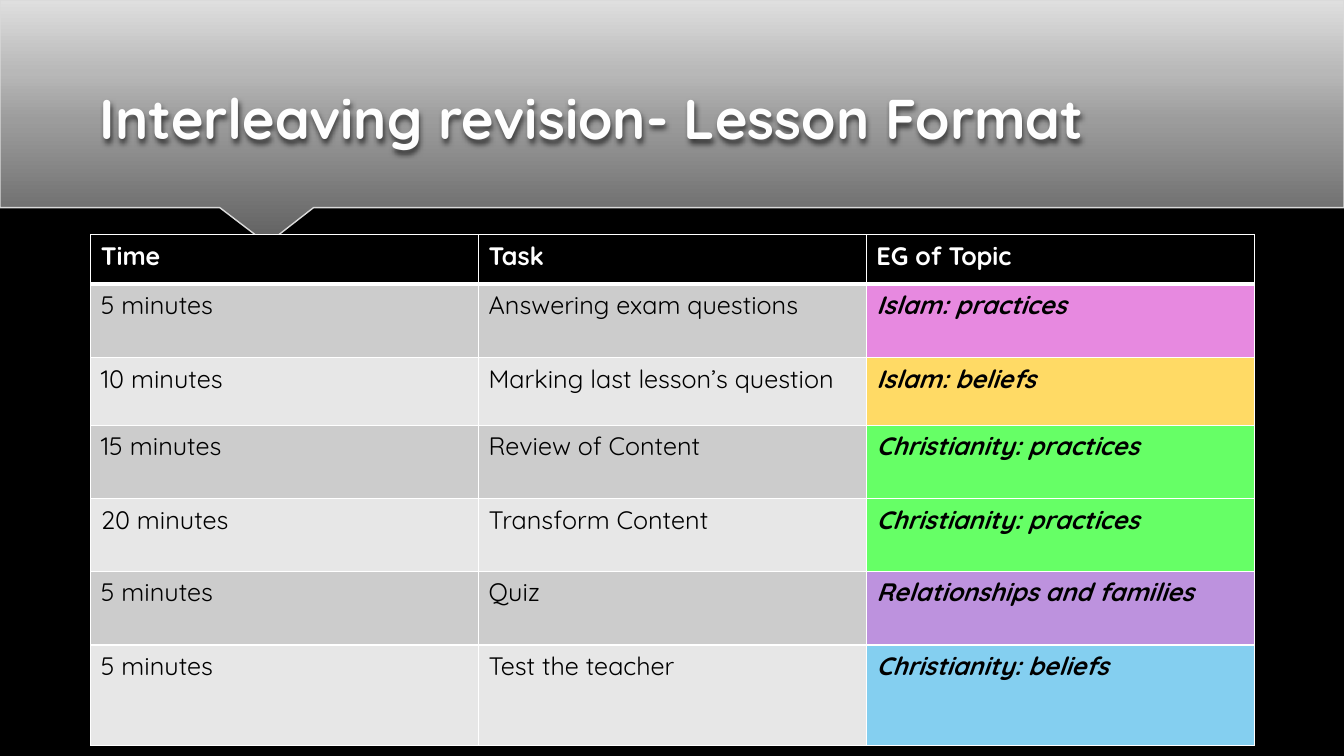
from lxml.etree import SubElement
from pptx import Presentation
from pptx.dml.color import RGBColor
from pptx.enum.text import MSO_ANCHOR, MSO_AUTO_SIZE, PP_ALIGN
from pptx.oxml.ns import qn
from pptx.util import Inches, Pt

FONT = "Quicksand"
HEADS = ["Time", "Task", "EG of Topic"]
TASKS = [
    ("5 minutes", "Answering exam questions", "Islam: practices", "E789E0"),
    ("10 minutes", "Marking last lesson’s question", "Islam: beliefs", "FFDA65"),
    ("15 minutes", "Review of Content", "Christianity: practices", "66FF66"),
    ("20 minutes", "Transform Content", "Christianity: practices", "66FF66"),
    ("5 minutes", "Quiz", "Relationships and families", "BD92DE"),
    ("5 minutes", "Test the teacher", "Christianity: beliefs", "84CFF0"),
]
ROWS = [0.49, 0.73, 0.67, 0.73, 0.72, 0.73, 1]
BANDS = ["CCCCCC", "E7E7E7"]
BANNER = [
    (13.33, 0), (0, 0), (0, 2.06), (2.18, 2.06), (2.6, 2.38), (2.62, 2.39),
    (2.67, 2.39), (2.7, 2.38), (3.11, 2.06), (13.33, 2.06),
]
STOPS = [(0, "616161"), (50, "9C9C9C"), (70, "B8B8B8"), (100, "DFDFDF")]


def paint(fill, color):
    fill.solid()
    fill.fore_color.rgb = RGBColor.from_string(color)


def style(para, size, color, bold=False, italic=False):
    font = para.font
    font.name, font.size = FONT, Pt(size)
    font.bold, font.italic = bold, italic
    font.color.rgb = RGBColor.from_string(color)
    para.alignment = PP_ALIGN.LEFT


def node(parent, tag, **attrs):
    return SubElement(parent, qn(tag), {k: str(v) for k, v in attrs.items()})


def tint(parent, color, alpha=100):
    rgb = node(parent, "a:srgbClr", val=color)
    if alpha < 100:
        node(rgb, "a:alpha", val=alpha * 1000)


def shade(shape, blur, dist, alpha):
    """Give the shape a soft black shadow that falls downwards."""
    shape.shadow.inherit = False
    effects = shape.element.spPr.find(qn("a:effectLst"))
    drop = node(effects, "a:outerShdw", blurRad=Pt(blur), dist=Pt(dist),
                dir=90 * 60000, algn="tl", rotWithShape=0)
    tint(drop, "000000", alpha)


def blend(shape, stops):
    """Fill the shape with a gradient that runs from bottom to top."""
    shape.fill.gradient()
    grad = shape.element.spPr.find(qn("a:gradFill"))
    for child in list(grad):
        grad.remove(child)
    items = node(grad, "a:gsLst")
    for pos, color in stops:
        tint(node(items, "a:gs", pos=pos * 1000), color)
    node(grad, "a:lin", ang=270 * 60000, scaled=0)


def add_banner(slide):
    points = [(Inches(x), Inches(y)) for x, y in BANNER]
    build = slide.shapes.build_freeform(*points[0])
    build.add_line_segments(points[1:], close=True)
    banner = build.convert_to_shape()
    blend(banner, STOPS)
    paint(banner.line.fill, "DADADA")
    banner.line.width = Pt(1)
    shade(banner, 4, 3, 35)
    slide.shapes.title.element.addprevious(banner.element)


def set_title(slide, text):
    title = slide.shapes.title
    title.left, title.top = Inches(0.89), Inches(0.49)
    title.width, title.height = Inches(11.56), Inches(1.06)
    frame = title.text_frame
    frame.text = text
    frame.word_wrap = True
    frame.auto_size = MSO_AUTO_SIZE.NONE
    frame.vertical_anchor = MSO_ANCHOR.BOTTOM
    style(frame.paragraphs[0], 40, "FEFEFE", bold=True)
    shade(title, 4, 2, 60)


def edge(cell, widths):
    """Draw white borders; the widths are for left, right, top, bottom."""
    props = cell.fill._xPr
    lines = []
    for side, width in zip("LRTB", widths):
        line = node(props, f"a:ln{side}", w=Pt(width))
        tint(node(line, "a:solidFill"), "FFFFFF")
        lines.append(line)
    for i, line in enumerate(lines):
        props.insert(i, line)


def set_cell(cell, text, fill, color="000000", bold=False, italic=False,
             top=1, base=1):
    cell.text = text
    style(cell.text_frame.paragraphs[0], 18, color, bold, italic)
    paint(cell.fill, fill)
    edge(cell, (1, 1, top, base))


def add_plan(slide):
    table = slide.shapes.add_table(
        len(ROWS), len(HEADS), Inches(0.9), Inches(2.33),
        Inches(11.54), Inches(sum(ROWS))).table
    for row, height in zip(table.rows, ROWS):
        row.height = Inches(height)
    for col, head in enumerate(HEADS):
        set_cell(table.cell(0, col), head, "000000", "FFFFFF", bold=True, base=3)
    for row, (time, task, topic, color) in enumerate(TASKS, 1):
        band = BANDS[(row - 1) % 2]
        top = 3 if row == 1 else 1
        set_cell(table.cell(row, 0), time, band, top=top)
        set_cell(table.cell(row, 1), task, band, top=top)
        set_cell(table.cell(row, 2), topic, color, bold=True, italic=True, top=top)


def main():
    deck = Presentation()
    deck.slide_width, deck.slide_height = Inches(13.33), Inches(7.5)
    slide = deck.slides.add_slide(deck.slide_layouts[5])
    paint(slide.background.fill, "000000")
    set_title(slide, "Interleaving revision- Lesson Format")
    add_banner(slide)
    add_plan(slide)
    deck.save("out.pptx")


if __name__ == "__main__":
    main()
